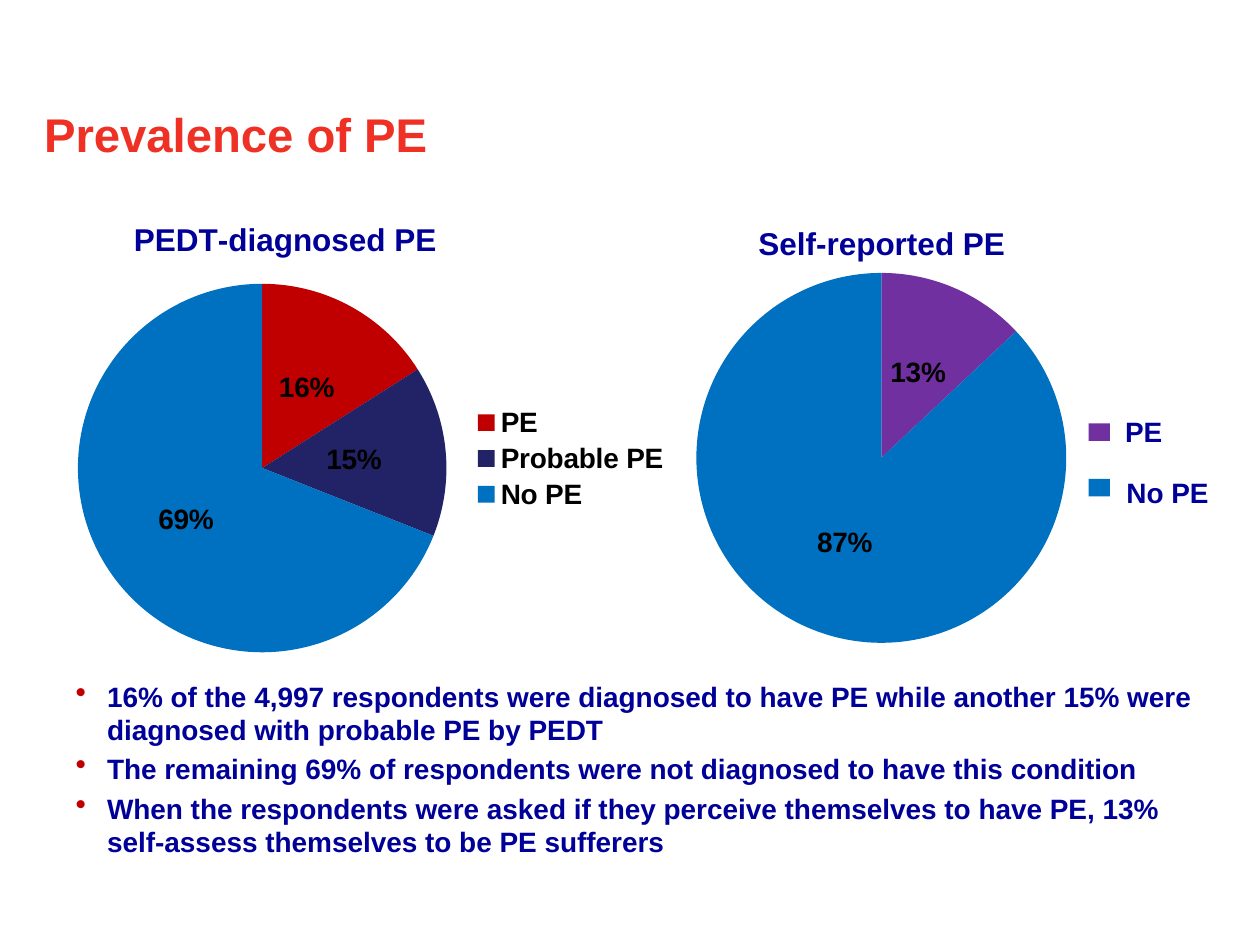
"""Build the slide on the prevalence of PE, with two pie charts and findings."""
from dataclasses import dataclass

from lxml.etree import SubElement
from pptx import Presentation
from pptx.chart.data import CategoryChartData
from pptx.dml.color import RGBColor
from pptx.enum.chart import XL_CHART_TYPE as ChartType
from pptx.enum.chart import XL_LABEL_POSITION as LabelPosition
from pptx.enum.chart import XL_LEGEND_POSITION as LegendPosition
from pptx.enum.shapes import MSO_SHAPE as ShapeType
from pptx.enum.text import MSO_ANCHOR as Anchor
from pptx.oxml import parse_xml
from pptx.oxml.ns import nsdecls, qn
from pptx.util import Inches, Pt

RED = RGBColor(0xEF, 0x31, 0x25)
NAVY = RGBColor(0x00, 0x00, 0x99)
BLACK = RGBColor(0x00, 0x00, 0x00)
CRIMSON = RGBColor(0xC0, 0x00, 0x00)
INDIGO = RGBColor(0x22, 0x22, 0x67)
BLUE = RGBColor(0x00, 0x70, 0xC0)
PURPLE = RGBColor(0x70, 0x30, 0xA0)
FONT = "Arial"
COLUMNS, ROWS = 100, 75
UNIT = Inches(10) // COLUMNS


@dataclass(frozen=True)
class Area:
    left: float
    top: float
    width: float
    height: float

    def lengths(self) -> tuple:
        """Return the grid area as slide lengths."""
        return tuple(round(value * UNIT) for value in (self.left, self.top, self.width, self.height))


@dataclass(frozen=True)
class Pie:
    title: str
    area: Area
    categories: tuple
    values: tuple
    colors: tuple
    title_share: dict
    plot_share: dict
    legend_share: dict | None = None


@dataclass(frozen=True)
class LegendKey:
    label: str
    color: RGBColor
    marker: Area
    text: Area


PIES = (
    Pie("PEDT-diagnosed PE", Area(0.4, 15.4, 57.5, 37.5),
        ("PE", "Probable PE", "No PE"), (0.16, 0.15, 0.69), (CRIMSON, INDIGO, BLUE),
        {"x": 0.17, "y": 0.04}, {"x": 0.1, "y": 0.19, "w": 0.51, "h": 0.78},
        {"x": 0.64, "y": 0.44}),
    Pie("Self-reported PE", Area(43.3, 15.8, 56.7, 36.7),
        ("1", "2"), (0.13, 0.87), (PURPLE, BLUE),
        {"x": 0.29, "y": 0.04}, {"x": 0.21, "y": 0.16, "w": 0.52, "h": 0.8}),
)
LEGEND_KEYS = (
    LegendKey("PE", PURPLE, Area(86.4, 33.6, 1.7, 1.4), Area(89.3, 32.4, 8, 3.7)),
    LegendKey("No PE", BLUE, Area(86.4, 38, 1.7, 1.4), Area(89.4, 37.2, 8, 3.7)),
)
FINDINGS = (
    "16% of the 4,997 respondents were diagnosed to have PE while another 15% were "
    "diagnosed with probable PE by PEDT",
    "The remaining 69% of respondents were not diagnosed to have this condition",
    "When the respondents were asked if they perceive themselves to have PE, 13% "
    "self-assess themselves to be PE sufferers",
)


def set_font(font, size: float, color: RGBColor) -> None:
    """Apply the slide's bold typeface."""
    font.name, font.size, font.bold = FONT, Pt(size), True
    font.color.rgb = color


def set_layout(element, index: int, shares: dict) -> None:
    """Place a chart part by shares of the chart's size."""
    for old in element.findall(qn("c:layout")):
        element.remove(old)
    layout = parse_xml(f"<c:layout {nsdecls('c')}/>")
    manual = SubElement(layout, qn("c:manualLayout"))
    if "w" in shares:
        SubElement(manual, qn("c:layoutTarget")).set("val", "inner")
    for name in ("x", "y"):
        SubElement(manual, qn(f"c:{name}Mode")).set("val", "edge")
    for name, share in shares.items():
        SubElement(manual, qn(f"c:{name}")).set("val", str(share))
    element.insert(index, layout)


def add_text(slide, area: Area, lines: tuple, size: float, color: RGBColor,
             anchor=Anchor.MIDDLE):
    """Add a wrapped text box without insets and return its paragraphs."""
    frame = slide.shapes.add_textbox(*area.lengths()).text_frame
    frame.word_wrap, frame.vertical_anchor = True, anchor
    frame.margin_left = frame.margin_right = frame.margin_top = frame.margin_bottom = 0
    frame.text = "\n".join(lines)
    for paragraph in frame.paragraphs:
        set_font(paragraph.font, size, color)
    return frame.paragraphs


def add_pie(slide, pie: Pie) -> None:
    """Add a pie chart with its title, labels and optional legend."""
    data = CategoryChartData(number_format="0%")
    data.categories = pie.categories
    data.add_series("Series 1", pie.values)
    chart = slide.shapes.add_chart(ChartType.PIE, *pie.area.lengths(), data).chart
    chart.font.name, chart.font.size = FONT, Pt(10)
    chart.font.color.rgb = BLACK
    chart.has_title = True
    title = chart.chart_title
    title.text_frame.text = pie.title
    set_font(title.text_frame.paragraphs[0].font, 18, NAVY)
    title.include_in_layout = False
    set_layout(title._element, 1, pie.title_share)
    set_layout(chart._chartSpace.chart.plotArea, 0, pie.plot_share)
    chart.has_legend = pie.legend_share is not None
    if chart.has_legend:
        chart.legend.position = LegendPosition.RIGHT
        chart.legend.include_in_layout = False
        set_font(chart.legend.font, 16, BLACK)
        set_layout(chart.legend._element, 1, pie.legend_share)
    plot = chart.plots[0]
    plot.vary_by_categories = True
    series = plot.series[0]
    for index, color in enumerate(pie.colors):
        fill = series.points[index].format.fill
        fill.solid()
        fill.fore_color.rgb = color
    labels = series.data_labels
    labels.show_value, labels.position = True, LabelPosition.CENTER
    labels.number_format, labels.number_format_is_linked = "0%", False
    set_font(labels.font, 16, BLACK)


def add_legend_key(slide, key: LegendKey) -> None:
    """Add a coloured marker and its label."""
    marker = slide.shapes.add_shape(ShapeType.RECTANGLE, *key.marker.lengths())
    marker.shadow.inherit = False
    marker.fill.solid()
    marker.fill.fore_color.rgb = key.color
    marker.line.fill.background()
    add_text(slide, key.text, (key.label,), 16, NAVY)


def add_findings(slide) -> None:
    """Add the bulleted findings below the charts."""
    paragraphs = add_text(slide, Area(6, 53.9, 90, 15.8), FINDINGS, 16, NAVY, Anchor.TOP)
    for index, paragraph in enumerate(paragraphs):
        properties = paragraph._p.get_or_add_pPr()
        properties.set("marL", str(Inches(0.25)))
        properties.set("indent", str(-Inches(0.25)))
        bullet = (
            f"<a:buClr {nsdecls('a')}><a:srgbClr val='{CRIMSON}'/></a:buClr>",
            f"<a:buSzPct {nsdecls('a')} val='110000'/>",
            f"<a:buChar {nsdecls('a')} char='•'/>",
        )
        for position, xml in enumerate(bullet):
            properties.insert(position, parse_xml(xml))
        if index:
            paragraph.space_before = Pt(3.2)


def main() -> None:
    """Build and save the presentation."""
    presentation = Presentation()
    presentation.slide_width, presentation.slide_height = COLUMNS * UNIT, ROWS * UNIT
    slide = presentation.slides.add_slide(presentation.slide_layouts[6])
    heading = add_text(slide, Area(3.5, 8.2, 90, 5.3), ("Prevalence of PE",), 27, RED)
    heading[0].line_spacing = 0.95
    for pie in PIES:
        add_pie(slide, pie)
    add_findings(slide)
    for key in LEGEND_KEYS:
        add_legend_key(slide, key)
    presentation.save("out.pptx")


if __name__ == "__main__":
    main()
